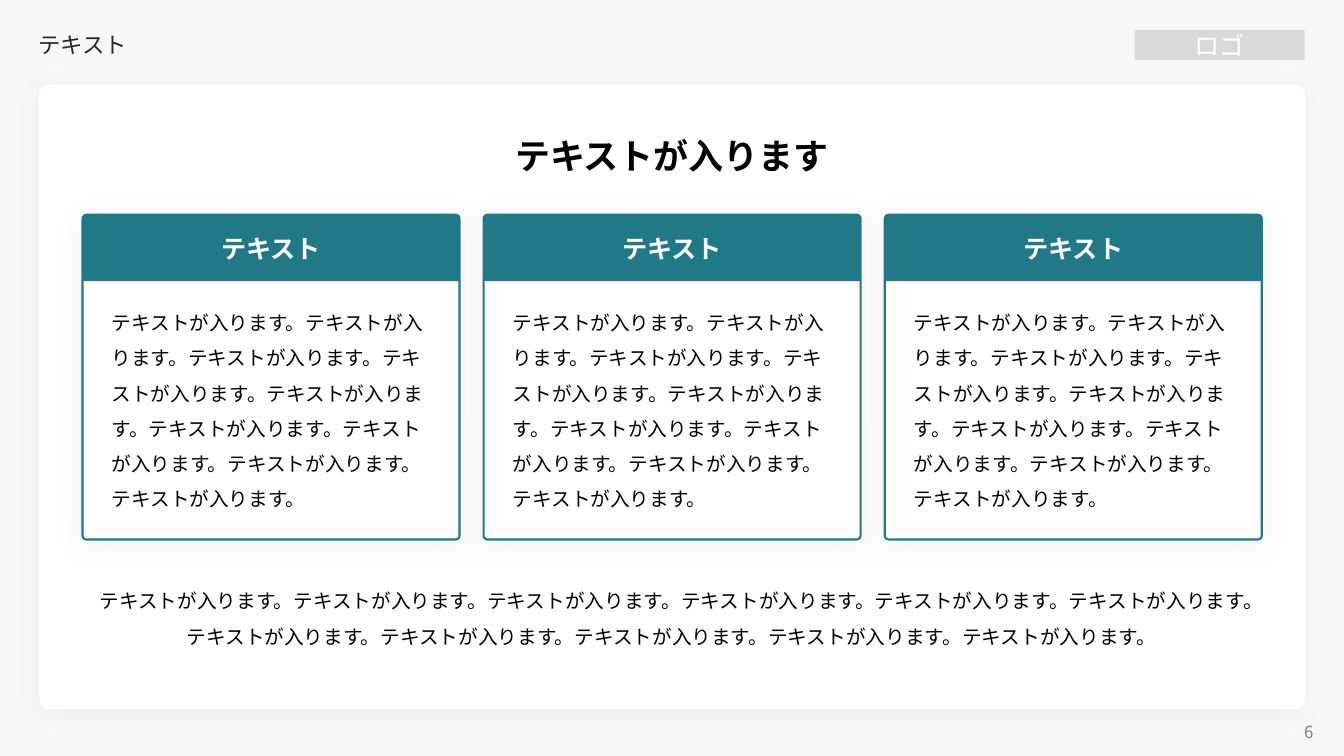
from dataclasses import dataclass

from lxml import etree
from pptx import Presentation
from pptx.dml.color import RGBColor
from pptx.enum import shapes, text
from pptx.oxml import ns
from pptx.util import Pt


@dataclass(frozen=True)
class Theme:
    font: str = "Noto Sans CJK JP"
    background: str = "F7F7F7"
    white: str = "FFFFFF"
    black: str = "000000"
    accent: str = "217887"
    title: str = "262626"
    logo: str = "D9D9D9"
    muted: str = "808080"
    headline_size: float = 25
    label_size: float = 18
    title_size: float = 16
    body_size: float = 14
    number_size: float = 12


THEME = Theme()
SENTENCE = "テキストが入ります。"
CARDS = [("テキスト", SENTENCE * 9)] * 3
CARD_LEFT, CARD_TOP, CARD_WIDTH, CARD_HEIGHT = 59, 153.4, 269.3, 232
CARD_PITCH = 286.5
HEADER_HEIGHT = 47.5


def rgb(value):
    return RGBColor.from_string(value)


def write(shape, content, size, color, bold=False, align=text.PP_ALIGN.LEFT,
          anchor=text.MSO_ANCHOR.MIDDLE, spacing=1.0):
    frame = shape.text_frame
    frame.text = content
    frame.word_wrap = True
    frame.auto_size = text.MSO_AUTO_SIZE.NONE
    frame.vertical_anchor = anchor
    for paragraph in frame.paragraphs:
        paragraph.alignment = align
        paragraph.line_spacing = spacing
        for run in paragraph.runs:
            run.font.size = Pt(size)
            run.font.bold = bold
            run.font.color.rgb = rgb(color)
            run.font.name = THEME.font
            properties = run.font._element
            etree.SubElement(properties, ns.qn("a:ea"), typeface=THEME.font)


def add_text(slide, box, content, size, color, **style):
    shape = slide.shapes.add_textbox(*map(Pt, box))
    write(shape, content, size, color, **style)


def add_box(slide, kind, box, fill, line=None, adjustments=()):
    shape = slide.shapes.add_shape(kind, *map(Pt, box))
    shape.shadow.inherit = False
    shape.fill.solid()
    shape.fill.fore_color.rgb = rgb(fill)
    if line:
        shape.line.color.rgb = rgb(line)
        shape.line.width = Pt(1.5)
    else:
        shape.line.fill.background()
    for index, value in enumerate(adjustments):
        shape.adjustments[index] = value
    return shape


def add_shadow(shape, color, opacity):
    """Cast a soft shadow straight down; opacity is in percent."""
    effects = shape._element.spPr.find(ns.qn("a:effectLst"))
    shadow = etree.SubElement(
        effects, ns.qn("a:outerShdw"), blurRad=str(Pt(20)), dist=str(Pt(3)),
        dir="5400000", algn="t", rotWithShape="0")
    shade = etree.SubElement(shadow, ns.qn("a:srgbClr"), val=color)
    etree.SubElement(shade, ns.qn("a:alpha"), val=str(opacity * 1000))


def add_title(slide, content):
    title = slide.shapes.title
    title.left, title.top, title.width, title.height = map(Pt, (20, 18, 720, 29.5))
    write(title, content, THEME.title_size, THEME.title, spacing=0.9)


def add_card(slide, left, heading, body):
    frame = add_box(slide, shapes.MSO_SHAPE.ROUNDED_RECTANGLE,
                    (left, CARD_TOP, CARD_WIDTH, CARD_HEIGHT),
                    THEME.white, THEME.accent, [0.012])
    add_shadow(frame, THEME.muted, 10)
    header = add_box(slide, shapes.MSO_SHAPE.ROUND_2_SAME_RECTANGLE,
                     (left, CARD_TOP, CARD_WIDTH, HEADER_HEIGHT),
                     THEME.accent, adjustments=[0.046, 0])
    write(header, heading, THEME.label_size, THEME.white, bold=True,
          align=text.PP_ALIGN.CENTER)
    add_text(slide, (left + 13.7, CARD_TOP + 56.8, 247, 157.7), body,
             THEME.body_size, THEME.black, anchor=text.MSO_ANCHOR.TOP, spacing=1.5)


def main():
    presentation = Presentation()
    presentation.slide_width, presentation.slide_height = Pt(960), Pt(540)
    slide = presentation.slides.add_slide(presentation.slide_layouts[5])
    slide.background.fill.solid()
    slide.background.fill.fore_color.rgb = rgb(THEME.background)
    add_title(slide, "テキスト")

    panel = add_box(slide, shapes.MSO_SHAPE.ROUNDED_RECTANGLE,
                    (28, 60.4, 904, 446.4), THEME.white, adjustments=[0.017])
    add_shadow(panel, THEME.black, 3)
    logo = add_box(slide, shapes.MSO_SHAPE.RECTANGLE,
                   (810.7, 21.4, 121.2, 21.4), THEME.logo)
    write(logo, "ロゴ", THEME.label_size, THEME.white, align=text.PP_ALIGN.CENTER)
    add_text(slide, (721.4, 514, 224, 17.3), "6", THEME.number_size, THEME.muted,
             align=text.PP_ALIGN.RIGHT)

    add_text(slide, (85.7, 92.2, 788.4, 37.4), "テキストが入ります",
             THEME.headline_size, THEME.black, bold=True,
             align=text.PP_ALIGN.CENTER, anchor=text.MSO_ANCHOR.TOP)
    for index, (heading, body) in enumerate(CARDS):
        add_card(slide, CARD_LEFT + index * CARD_PITCH, heading, body)
    add_text(slide, (CARD_LEFT, 409, 841.7, 56.2), SENTENCE * 11,
             THEME.body_size, THEME.black, align=text.PP_ALIGN.CENTER,
             anchor=text.MSO_ANCHOR.TOP, spacing=1.5)
    presentation.save("out.pptx")


if __name__ == "__main__":
    main()
